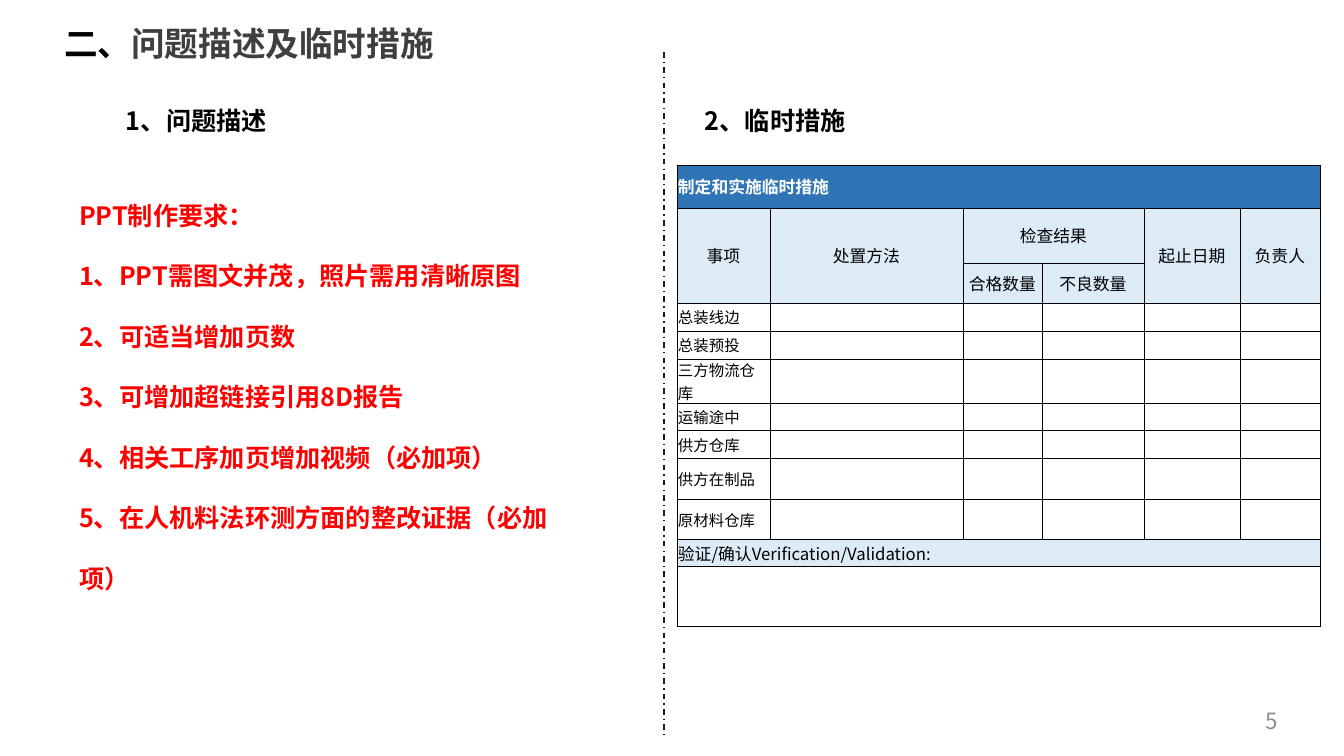
from lxml import etree
from pptx import Presentation
from pptx.dml.color import RGBColor
from pptx.enum.dml import MSO_LINE
from pptx.enum.shapes import MSO_CONNECTOR
from pptx.enum.text import MSO_ANCHOR, MSO_AUTO_SIZE, PP_ALIGN
from pptx.oxml.ns import qn
from pptx.util import Emu, Pt

LEFT, CENTER, RIGHT = PP_ALIGN.LEFT, PP_ALIGN.CENTER, PP_ALIGN.RIGHT
TOP, MIDDLE = MSO_ANCHOR.TOP, MSO_ANCHOR.MIDDLE

BLACK = RGBColor(0x00, 0x00, 0x00)
WHITE = RGBColor(0xFF, 0xFF, 0xFF)
RED = RGBColor(0xFF, 0x00, 0x00)
GRAY = RGBColor(0x8C, 0x8C, 0x8C)
TITLE_GRAY = RGBColor(0x3C, 0x40, 0x40)
DIVIDER = RGBColor(0x19, 0x19, 0x19)
HEADER_BLUE = RGBColor(0x2F, 0x75, 0xB5)
PALE_BLUE = RGBColor(0xDD, 0xEB, 0xF7)

CJK_FONT = "Noto Sans CJK SC"
LATIN_FONT = "Arial"

# Content
TITLE = [("二、", BLACK), ("问题描述及临时措施", TITLE_GRAY)]
REQUIREMENTS = [
    "PPT制作要求：",
    "1、PPT需图文并茂，照片需用清晰原图",
    "2、可适当增加页数",
    "3、可增加超链接引用8D报告",
    "4、相关工序加页增加视频（必加项）",
    "5、在人机料法环测方面的整改证据（必加项）",
]
# text, (left, top, width, height), size, colour, bold, alignment, anchor
LABELS = [
    ("1、问题描述", (116, 100, 448, 40), 18, BLACK, True, LEFT, TOP),
    ("2、临时措施", (695, 100, 448, 40), 18, BLACK, True, LEFT, TOP),
    ("5", (986, 701, 302, 40), 16, GRAY, False, RIGHT, MIDDLE),
]
TABLE_TITLE = "制定和实施临时措施"
# row, column, row span, column span, text, font
HEADERS = [
    (1, 0, 2, 1, "事项", CJK_FONT),
    (1, 1, 2, 1, "处置方法", CJK_FONT),
    (1, 2, 1, 2, "检查结果", CJK_FONT),
    (1, 4, 2, 1, "起止日期", CJK_FONT),
    (1, 5, 2, 1, "负责人", CJK_FONT),
    (2, 2, 1, 1, "合格数量", LATIN_FONT),
    (2, 3, 1, 1, "不良数量", LATIN_FONT),
]
ITEMS = ["总装线边", "总装预投", "三方物流仓库", "运输途中",
         "供方仓库", "供方在制品", "原材料仓库"]
VERIFICATION = "验证/确认Verification/Validation:"
COLUMN_WIDTHS = [93, 193, 79, 102, 96, 80]
ROW_HEIGHTS = [43, 55, 40, 28, 28, 44, 27, 28, 41, 40, 27, 60]
FIRST_ITEM_ROW = 3

SCALE = 914400 / 100.8


def px(length):
    return Emu(round(length * SCALE))


def place(shape, left, top, width, height):
    shape.left, shape.top = px(left), px(top)
    shape.width, shape.height = px(width), px(height)


def format_run(run, size, color, bold=False, font=CJK_FONT):
    run.font.size, run.font.bold, run.font.name = Pt(size), bold, font
    run.font.color.rgb = color
    etree.SubElement(run.font._element, qn("a:ea"), typeface=CJK_FONT)


def prepare_frame(text_frame, anchor):
    text_frame.word_wrap = True
    text_frame.auto_size = MSO_AUTO_SIZE.NONE
    text_frame.vertical_anchor = anchor


def add_borders(cell):
    properties = cell._tc.get_or_add_tcPr()
    for side in ("lnL", "lnR", "lnT", "lnB"):
        line = etree.SubElement(properties, qn(f"a:{side}"), w=str(Pt(0.5)))
        fill = etree.SubElement(line, qn("a:solidFill"))
        etree.SubElement(fill, qn("a:srgbClr"), val=str(BLACK))


def fill_cell(cell, text, color, size=12, ink=BLACK, bold=False,
              alignment=LEFT, font=CJK_FONT):
    cell.fill.solid()
    cell.fill.fore_color.rgb = color
    cell.text_frame.text = text
    paragraph = cell.text_frame.paragraphs[0]
    paragraph.alignment = alignment
    format_run(paragraph.runs[0], size, ink, bold, font)


def add_title(slide):
    title = slide.shapes.title
    place(title, 54, 18, 1117, 92)
    prepare_frame(title.text_frame, TOP)
    paragraph = title.text_frame.paragraphs[0]
    paragraph.alignment = LEFT
    for text, color in TITLE:
        run = paragraph.add_run()
        run.text = text
        format_run(run, 24, color, True)


def add_requirements(slide):
    body = slide.placeholders[1]
    place(body, 69, 165, 522, 436)
    prepare_frame(body.text_frame, TOP)
    body.text_frame.text = "\n".join(REQUIREMENTS)
    for paragraph in body.text_frame.paragraphs:
        properties = paragraph._p.get_or_add_pPr()
        properties.set("marL", "0")
        properties.set("indent", "0")
        etree.SubElement(properties, qn("a:buNone"))
        paragraph.line_spacing = 2.0
        paragraph.space_before = Pt(0)
        format_run(paragraph.runs[0], 18, RED, True)


def add_label(slide, text, box, size, color, bold, alignment, anchor):
    label = slide.shapes.add_textbox(*map(px, box))
    prepare_frame(label.text_frame, anchor)
    label.text_frame.text = text
    paragraph = label.text_frame.paragraphs[0]
    paragraph.alignment = alignment
    format_run(paragraph.runs[0], size, color, bold)


def add_divider(slide):
    divider = slide.shapes.add_connector(
        MSO_CONNECTOR.STRAIGHT, px(664), px(52), px(664), px(735))
    divider.line.color.rgb = DIVIDER
    divider.line.width = Pt(1)
    divider.line.dash_style = MSO_LINE.DASH_DOT
    etree.SubElement(divider._element.spPr, qn("a:effectLst"))


def add_measures_table(slide):
    table = slide.shapes.add_table(
        len(ROW_HEIGHTS), len(COLUMN_WIDTHS), px(677), px(165),
        px(sum(COLUMN_WIDTHS)), px(sum(ROW_HEIGHTS))).table
    table.first_row = table.horz_banding = False
    for column, width in zip(table.columns, COLUMN_WIDTHS):
        column.width = px(width)
    for row, height in zip(table.rows, ROW_HEIGHTS):
        row.height = px(height)

    # Plain bordered grid
    for cell in table.iter_cells():
        add_borders(cell)
        cell.fill.background()
        cell.margin_left = cell.margin_right = px(1)
        cell.margin_top = cell.margin_bottom = 0
        cell.vertical_anchor = MIDDLE
        paragraph = cell.text_frame.paragraphs[0]
        etree.SubElement(paragraph._p, qn("a:endParaRPr"), sz="1100")

    # Full-width rows
    last_row, last_column = len(ROW_HEIGHTS) - 1, len(COLUMN_WIDTHS) - 1
    for row in (0, last_row - 1, last_row):
        table.cell(row, 0).merge(table.cell(row, last_column))
    fill_cell(table.cell(0, 0), TABLE_TITLE, HEADER_BLUE, ink=WHITE, bold=True)
    fill_cell(table.cell(last_row - 1, 0), VERIFICATION, PALE_BLUE)

    # Column headers and items
    for row, column, rows, columns, text, font in HEADERS:
        cell = table.cell(row, column)
        if rows * columns > 1:
            cell.merge(table.cell(row + rows - 1, column + columns - 1))
        fill_cell(cell, text, PALE_BLUE, alignment=CENTER, font=font)
    for row, item in enumerate(ITEMS, FIRST_ITEM_ROW):
        fill_cell(table.cell(row, 0), item, WHITE, size=11, font=LATIN_FONT)


def main():
    presentation = Presentation()
    presentation.slide_width, presentation.slide_height = px(1344), px(756)
    slide = presentation.slides.add_slide(presentation.slide_layouts[1])
    add_title(slide)
    add_requirements(slide)
    add_divider(slide)
    for label in LABELS:
        add_label(slide, *label)
    add_measures_table(slide)
    presentation.save("out.pptx")


if __name__ == "__main__":
    main()
